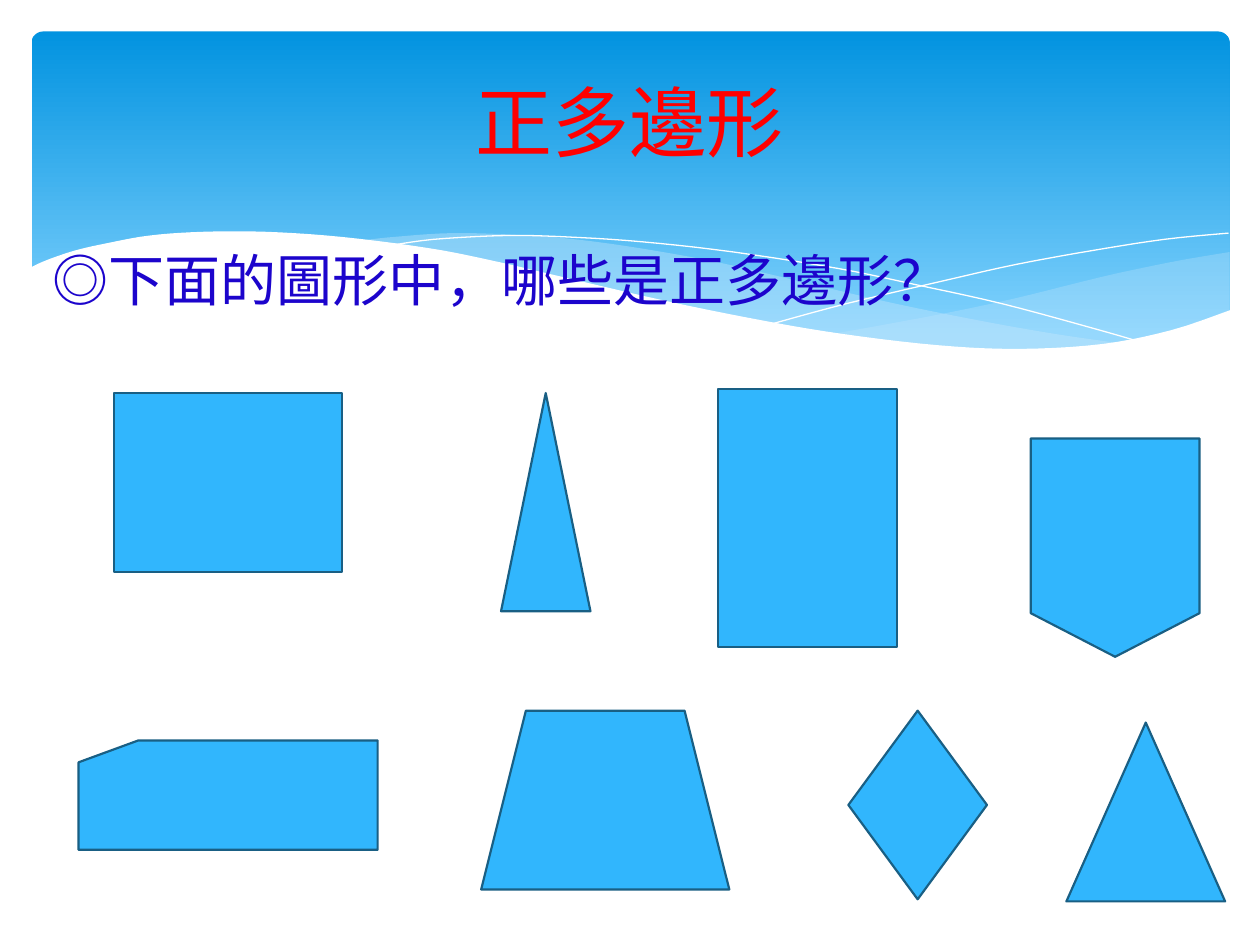
from dataclasses import dataclass

from lxml import etree
from pptx import Presentation
from pptx.dml.color import RGBColor
from pptx.enum.shapes import MSO_SHAPE
from pptx.enum.text import MSO_ANCHOR, PP_ALIGN
from pptx.oxml.ns import qn
from pptx.util import Pt

CENTER = PP_ALIGN.CENTER
MIDDLE = MSO_ANCHOR.MIDDLE
ROUNDED = MSO_SHAPE.ROUNDED_RECTANGLE
RECTANGLE = MSO_SHAPE.RECTANGLE
TRIANGLE = MSO_SHAPE.ISOSCELES_TRIANGLE
PENTAGON = MSO_SHAPE.FLOWCHART_OFFPAGE_CONNECTOR
CUT_CARD = MSO_SHAPE.FLOWCHART_CARD
TRAPEZOID = MSO_SHAPE.TRAPEZOID
DIAMOND = MSO_SHAPE.DIAMOND


@dataclass(frozen=True)
class Theme:
    banner_top: str = "0293E0"
    banner_bottom: str = "83D3FE"
    ribbon: str = "C6E7FC"
    white: str = "FFFFFF"
    title: str = "FF0000"
    question: str = "1C04CC"
    figure: str = "31B6FD"
    outline: str = "195F84"
    title_size: int = 44
    question_size: int = 32
    title_font: str = "Calibri"
    text_font: str = "Noto Sans CJK SC"
    punctuation_font: str = "Noto Sans CJK TC"


THEME = Theme()

# Curves of the banner's lower edge, as knots in points
RIGHT_TOP = [(702.7, 144), (673.2, 149), (641.5, 155.5), (619.9, 160.6),
             (579.6, 170.6), (542.2, 178.6), (508.3, 185), (475.9, 190.8)]
RIGHT_BOTTOM = [(475.9, 190.8), (507.6, 195.1), (536.4, 198), (578.2, 200.2),
                (614.9, 198.7), (645.8, 194.4), (673.2, 188.6), (702.7, 177.8)]
LEFT_TOP = [(643, 196.6), (602.6, 190.8), (558, 182.9), (508.3, 172.8),
            (452.9, 159.8), (409.7, 149.8), (370.1, 142.6), (334.8, 137.5),
            (302.4, 134.6), (259.9, 133.2), (225.4, 135.4), (205.9, 137.5)]
LEFT_BOTTOM = [(205.9, 137.5), (246.2, 143.3), (290.9, 151.9), (323.3, 159.8),
               (381.6, 172.8), (432.7, 183.6), (478.8, 191.5), (519.8, 197.3),
               (556.6, 199.4), (589, 200.2), (617, 199.4), (643, 196.6)]
FALLING_LINE = [(222.5, 140.4), (247.7, 136.8), (288.7, 134.6), (324, 135.4),
                (367.2, 138.2), (419, 144), (478.8, 153.4), (523.4, 162.7),
                (572.4, 173.5), (625.7, 187.9), (653, 195.8)]
RISING_LINE = [(441.4, 185), (483.8, 173.5), (538.6, 160.6), (580.3, 151.2),
               (623.5, 143.3), (665.3, 136.8), (702, 133.2)]
BANNER_EDGE = [(703.4, 177.1), (669.6, 188.6), (630, 196.6), (582.5, 199.4),
               (535.7, 197.3), (481, 190.8), (434.2, 182.9), (380.9, 172.1),
               (321.8, 158.4), (281.5, 149), (244.8, 141.8), (195.1, 135.4),
               (151.9, 132.5), (115.9, 132.5), (85.7, 134.6), (61.2, 139),
               (42.5, 143.3), (25.9, 149), (16.6, 153.4)]
LOWER_CORNERS = [(16.6, 236.9), (703.4, 236.9)]

# preset, left, top, width, height
FIGURES = [
    (RECTANGLE, 65.2, 224.6, 130.5, 102.2),
    (TRIANGLE, 286.3, 224.6, 51.1, 124.7),
    (RECTANGLE, 410.4, 222.3, 102.2, 147.4),
    (PENTAGON, 589, 250.6, 96.5, 124.7),
    (CUT_CARD, 44.9, 423.1, 170.9, 62.5),
    (TRAPEZOID, 275, 406.1, 141.8, 102.2),
    (DIAMOND, 484.8, 406.1, 79.2, 107.8),
    (TRIANGLE, 609.4, 412.9, 90.7, 102.2),
]


def smooth(knots, steps=5):
    """Return points on a Catmull-Rom curve through the knots."""
    padded = [knots[0], *knots, knots[-1]]
    points = [knots[0]]
    for a, b, c, d in zip(padded, padded[1:], padded[2:], padded[3:]):
        for step in range(1, steps + 1):
            t = step / steps
            points.append(tuple(
                b[i] + 0.5 * t * (c[i] - a[i]
                                  + t * (2 * a[i] - 5 * b[i] + 4 * c[i] - d[i]
                                         + t * (3 * (b[i] - c[i]) + d[i] - a[i])))
                for i in (0, 1)))
    return points


def add_outline(slide, points, close):
    start, *rest = [(Pt(x), Pt(y)) for x, y in points]
    builder = slide.shapes.build_freeform(*start)
    builder.add_line_segments(rest, close=close)
    outline = builder.convert_to_shape()
    outline.shadow.inherit = False
    return outline


def add_area(slide, points, color, opacity=100):
    area = add_outline(slide, points, close=True)
    area.fill.solid()
    area.fill.fore_color.rgb = RGBColor.from_string(color)
    area.line.fill.background()
    if opacity < 100:
        tint = area._element.spPr.find(qn("a:solidFill"))[0]
        etree.SubElement(tint, qn("a:alpha")).set("val", str(opacity * 1000))


def add_curve(slide, knots):
    curve = add_outline(slide, smooth(knots), close=False)
    curve.fill.background()
    curve.line.color.rgb = RGBColor.from_string(THEME.white)
    curve.line.width = Pt(0)


def add_preset(slide, preset, *box):
    shape = slide.shapes.add_shape(preset, *map(Pt, box))
    shape.shadow.inherit = False
    return shape


def add_banner(slide):
    banner = add_preset(slide, ROUNDED, 18, 18, 684.7, 194.4)
    banner.adjustments[0] = 0.034
    banner.line.fill.background()
    banner.fill.gradient()
    banner.fill.gradient_angle = 270
    stops = ((0, THEME.banner_top), (0.9, THEME.banner_bottom))
    for stop, (position, color) in zip(banner.fill.gradient_stops, stops):
        stop.position = position
        stop.color.rgb = RGBColor.from_string(color)
    add_area(slide, smooth(RIGHT_TOP) + smooth(RIGHT_BOTTOM), THEME.ribbon, 29)
    add_area(slide, smooth(LEFT_TOP) + smooth(LEFT_BOTTOM), THEME.ribbon, 40)
    add_curve(slide, FALLING_LINE)
    add_curve(slide, RISING_LINE)
    add_area(slide, smooth(BANNER_EDGE) + LOWER_CORNERS, THEME.white)


def format_run(run, size, color, latin, east_asian):
    run.font.size = Pt(size)
    run.font.color.rgb = RGBColor.from_string(color)
    run.font.name = latin
    typeface = etree.SubElement(run.font._element, qn("a:ea"))
    typeface.set("typeface", east_asian)


def place_text(holder, *box):
    """Position a text holder and return its centred first paragraph."""
    holder.left, holder.top, holder.width, holder.height = map(Pt, box)
    holder.text_frame.word_wrap = True
    holder.text_frame.vertical_anchor = MIDDLE
    paragraph = holder.text_frame.paragraphs[0]
    paragraph.alignment = CENTER
    return paragraph


def add_title(slide, text):
    title = slide.shapes.title
    title._element.getparent().append(title._element)  # in front of the banner
    paragraph = place_text(title, 36, 26.6, 648, 85)
    paragraph.text = text
    format_run(paragraph.runs[0], THEME.title_size, THEME.title,
               THEME.title_font, THEME.text_font)


def add_question(slide, *phrases):
    question = slide.shapes.add_textbox(0, 0, 0, 0)
    paragraph = place_text(question, 8.6, 122.4, 555.8, 74.2)
    for phrase in phrases:
        run = paragraph.add_run()
        run.text = phrase
        font = THEME.punctuation_font if phrase in "，？" else THEME.text_font
        format_run(run, THEME.question_size, THEME.question, font, font)


def add_figure(slide, preset, *box):
    figure = add_preset(slide, preset, *box)
    figure.fill.solid()
    figure.fill.fore_color.rgb = RGBColor.from_string(THEME.figure)
    figure.line.color.rgb = RGBColor.from_string(THEME.outline)
    figure.line.width = Pt(1.25)


def main():
    presentation = Presentation()
    presentation.slide_width, presentation.slide_height = Pt(720), Pt(540)
    slide = presentation.slides.add_slide(presentation.slide_layouts[5])
    add_banner(slide)
    add_title(slide, "正多邊形")
    add_question(slide, "◎下面的圖形中", "，", "哪些是正多邊形", "？")
    for figure in FIGURES:
        add_figure(slide, *figure)
    presentation.save("out.pptx")


if __name__ == "__main__":
    main()
